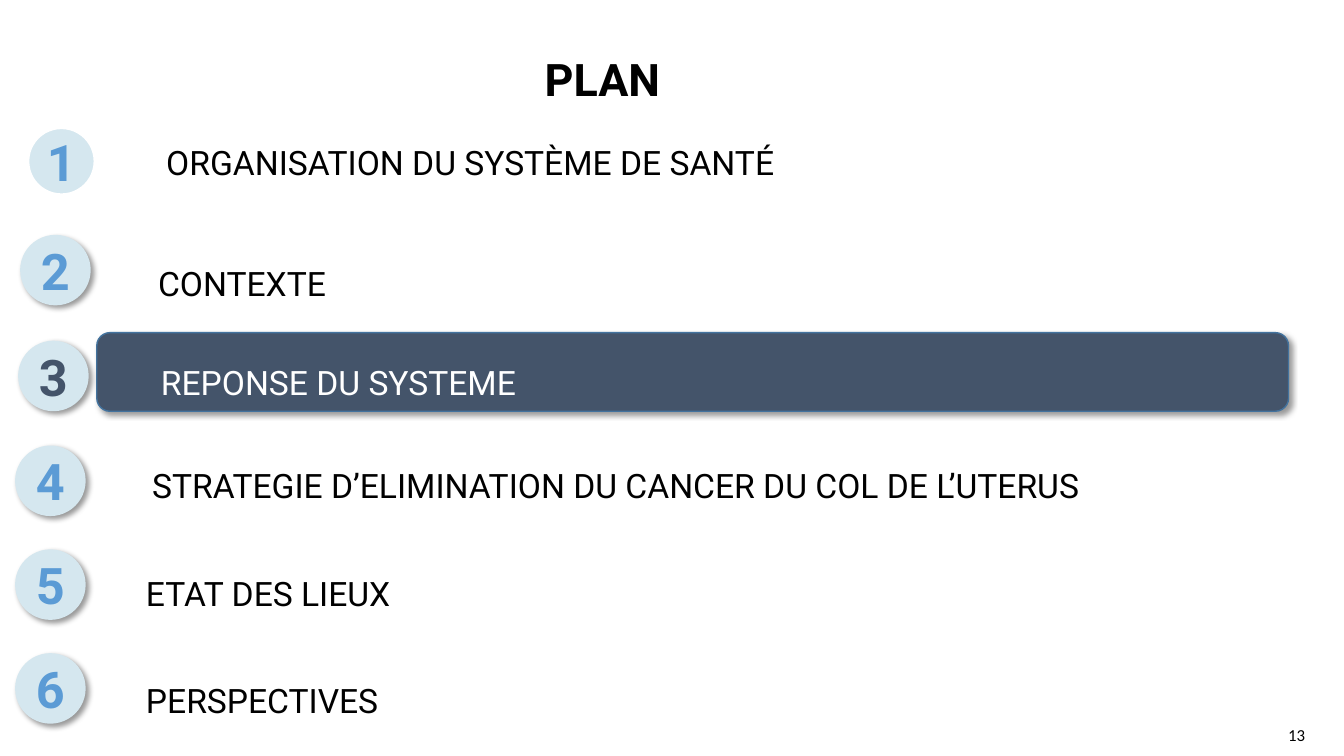
from dataclasses import dataclass

from lxml.etree import SubElement
from pptx import Presentation
from pptx.dml.color import RGBColor
from pptx.enum.shapes import MSO_SHAPE as Geo
from pptx.enum.text import MSO_ANCHOR as Anchor, PP_ALIGN as Align
from pptx.oxml.ns import qn
from pptx.util import Inches, Pt

HUES = {
    "ink": "000000",
    "white": "FFFFFF",
    "slate": "44546A",
    "edge": "43739E",
    "pale": "D5E7EF",
    "blue": "5B9BD5",
}
TITLE = {"size": Pt(32), "bold": True, "name": "Roboto"}
LABEL = {"size": Pt(24), "bold": False, "name": "Roboto"}
DIGIT = {"size": Pt(36), "bold": True, "name": "Roboto"}
FOOT = {"size": Pt(12), "bold": False, "name": "Calibri"}
DISC = 0.7


@dataclass
class Box:
    left: float
    top: float
    width: float
    height: float

    def emu(self) -> list:
        return [Inches(n) for n in (self.left, self.top, self.width, self.height)]


@dataclass
class Item:
    text: str
    disc: tuple[float, float]
    box: Box
    now: bool = False


ITEMS = [
    Item("ORGANISATION DU SYSTÈME DE SANTÉ", (0.26, 1.25), Box(1.05, 1.16, 11.82, 0.63)),
    Item("CONTEXTE", (0.2, 2.33), Box(0.97, 2.36, 11.82, 0.63)),
    Item("REPONSE DU SYSTEME", (0.18, 3.38), Box(0.96, 3.3, 11.82, 0.78), now=True),
    Item("STRATEGIE D’ELIMINATION DU CANCER DU COL DE L’UTERUS", (0.15, 4.42),
         Box(0.91, 4.36, 11.82, 0.63)),
    Item("ETAT DES LIEUX", (0.15, 5.45), Box(0.85, 5.43, 11.64, 0.71)),
    Item("PERSPECTIVES", (0.15, 6.48), Box(0.85, 6.5, 11.64, 0.63)),
]


def color(hue: str) -> RGBColor:
    return RGBColor.from_string(HUES[hue])


def write(shape, text: str, style: dict, hue: str, align=Align.CENTER, anchor=Anchor.MIDDLE):
    """Fill the shape with one styled paragraph and return that paragraph."""
    frame = shape.text_frame
    frame.word_wrap = True
    frame.vertical_anchor = anchor
    para = frame.paragraphs[0]
    para.alignment = align
    run = para.add_run()
    run.text = text
    for key, value in style.items():
        setattr(run.font, key, value)
    run.font.color.rgb = color(hue)
    return para


def shade(shape) -> None:
    """Cast a soft black shadow down and to the right."""
    props = shape._element.spPr
    list_ = props.find(qn("a:effectLst"))
    cast = SubElement(list_, qn("a:outerShdw"), blurRad=str(Pt(4)), dist=str(Pt(3)),
                      dir=str(45 * 60000), algn="tl", rotWithShape="0")
    tint = SubElement(cast, qn("a:srgbClr"), val=HUES["ink"])
    SubElement(tint, qn("a:alpha"), val="40000")


def form(slide, geo, box: Box, fill: str, edge: str = "", wide: float = 0, cast: bool = True):
    shape = slide.shapes.add_shape(geo, *box.emu())
    shape.shadow.inherit = False
    shape.fill.solid()
    shape.fill.fore_color.rgb = color(fill)
    if edge:
        shape.line.color.rgb = color(edge)
        shape.line.width = Pt(wide)
    else:
        shape.line.fill.background()
    if cast:
        shade(shape)
    return shape


def label(slide, item: Item) -> None:
    if item.now:
        shape = form(slide, Geo.ROUNDED_RECTANGLE, item.box, "slate", "edge", 1)
        hue, anchor = "white", Anchor.MIDDLE
    else:
        shape = slide.shapes.add_textbox(*item.box.emu())
        hue, anchor = "ink", Anchor.TOP
    para = write(shape, item.text, LABEL, hue, Align.JUSTIFY, anchor)
    para.level = 1
    para.line_spacing = 1.5
    props = para._p.get_or_add_pPr()
    props.set("marL", str(Inches(0.5)))
    props.set("indent", "0")


def disc(slide, num: int, item: Item) -> None:
    box = Box(*item.disc, DISC, DISC)
    if num == 1:
        shape = form(slide, Geo.OVAL, box, "pale", "white", 4.5, cast=False)
    else:
        shape = form(slide, Geo.OVAL, box, "pale")
    write(shape, str(num), DIGIT, "slate" if item.now else "blue")


def main() -> None:
    deck = Presentation()
    deck.slide_width, deck.slide_height = Inches(13.33), Inches(7.5)
    slide = deck.slides.add_slide(deck.slide_layouts[6])
    title = slide.shapes.add_textbox(*Box(0.37, 0.28, 11.21, 1).emu())
    write(title, "PLAN", TITLE, "ink")
    for num, item in enumerate(ITEMS, 1):
        label(slide, item)
        disc(slide, num, item)
    foot = slide.shapes.add_textbox(*Box(12.56, 7.12, 0.6, 0.34).emu())
    write(foot, "13", FOOT, "ink")
    deck.save("out.pptx")


if __name__ == "__main__":
    main()
